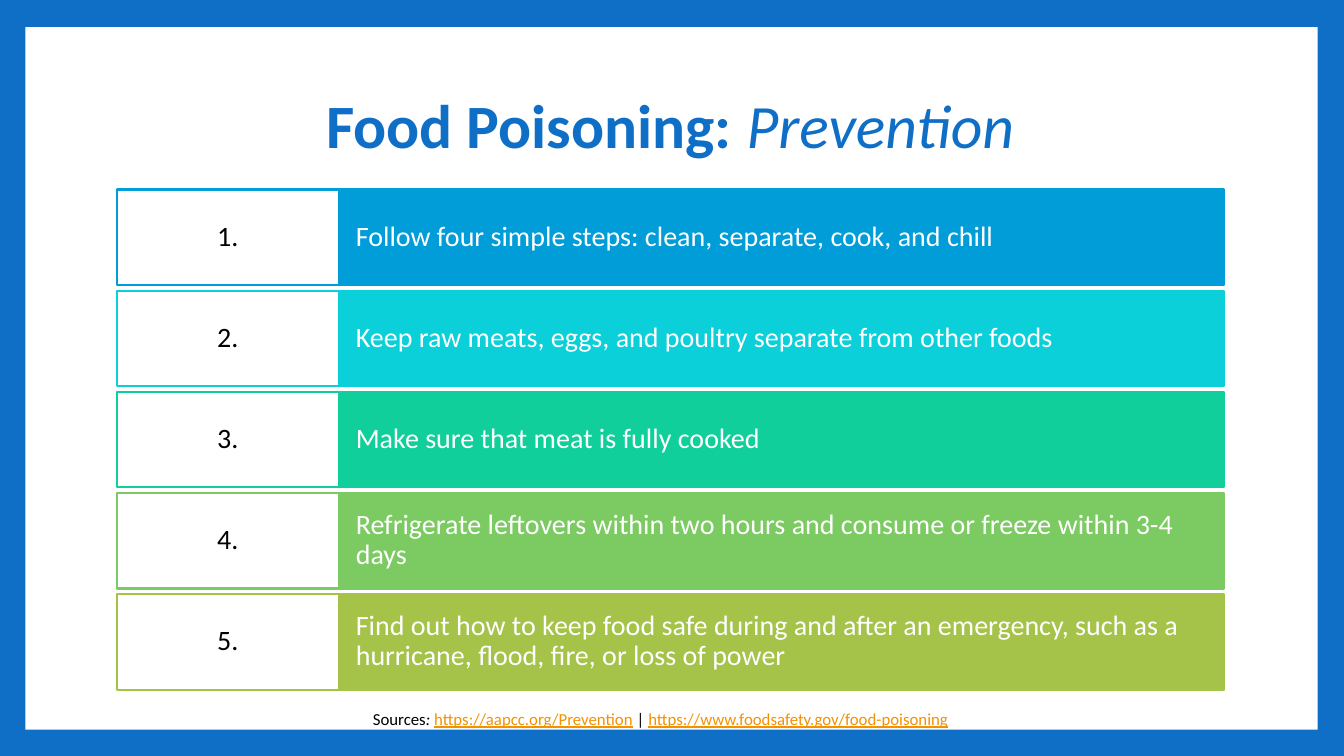
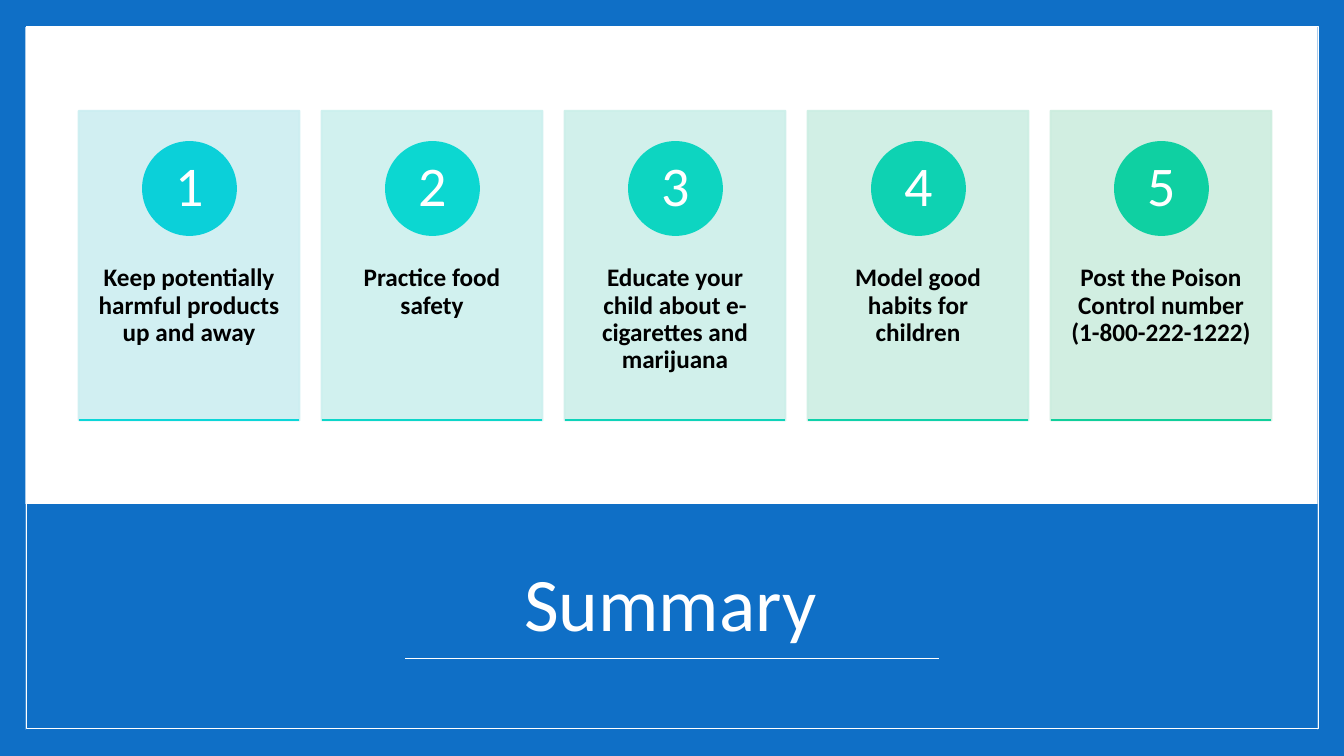
from dataclasses import dataclass
from typing import NamedTuple, Optional

from lxml.etree import SubElement
from pptx import Presentation
from pptx.dml.color import RGBColor
from pptx.enum.shapes import MSO_CONNECTOR as Link, MSO_SHAPE as Kind
from pptx.enum.text import MSO_ANCHOR as Anchor, MSO_AUTO_SIZE as Fit, PP_ALIGN as Align
from pptx.oxml.ns import qn
from pptx.shapes.autoshape import Shape
from pptx.slide import Slide
from pptx.text.text import TextFrame
from pptx.util import Inches, Pt

WIDE, HIGH = Inches(13.33), Inches(7.5)


@dataclass(frozen=True)
class Theme:
    font: str = "Calibri"
    blue: str = "0F6FC6"
    white: str = "FFFFFF"
    black: str = "000000"
    link: str = "F49100"
    head: float = 44
    big: float = 54
    digit: float = 40
    body: float = 20
    card: float = 18
    note: float = 12
    edge: float = 1.5
    thin: float = 0.79
    lead: float = 0.9
    alpha: int = 90


class Box(NamedTuple):
    """Percent shares of the slide's width and height."""
    x: float
    y: float
    w: float
    h: float


class Run(NamedTuple):
    text: str
    size: float
    color: str
    bold: bool = False
    italic: bool = False
    under: bool = False


class Step(NamedTuple):
    text: str
    color: str


class Card(NamedTuple):
    text: str
    tint: str
    disc: str
    rule: str


class Pad(NamedTuple):
    """Text insets in inches."""
    side: float
    top: float
    base: float


T = Theme()
PANEL = Box(1.88, 3.6, 96.15, 92.93)
FRAME = PANEL._replace(x=1.95, y=3.47)
BAND = PANEL._replace(y=66.67, h=29.87)
HEAD = Box(9.38, 8.93, 81, 16.13)
CLOSE = HEAD._replace(y=70.4, h=19.73)
NOTE = Box(27, 93.07, 45.9, 4)

LABEL = Box(8.7, 25.07, 16.5, 12.67)
BAR = LABEL._replace(x=LABEL.x + LABEL.w, w=65.85)
ROW = 13.37

TILE = Box(5.85, 14.67, 16.43, 40.93)
DISC = Box(TILE.x + 4.8, 18.8, 6.9, 12.27)
COL = 18.08

PLAIN = Pad(0.1, 0.05, 0.05)

STEPS = (
    Step("Follow four simple steps: clean, separate, cook, and chill", "009DD9"),
    Step("Keep raw meats, eggs, and poultry separate from other foods", "0BD0D9"),
    Step("Make sure that meat is fully cooked", "10CF9B"),
    Step("Refrigerate leftovers within two hours and consume or freeze within 3-4 days", "7CCA62"),
    Step("Find out how to keep food safe during and after an emergency, "
         "such as a hurricane, flood, fire, or loss of power", "A5C249"),
)

CARDS = (
    Card("Keep potentially harmful products up and away", "CCEEF1", "0BD0D9", "0CD6D8"),
    Card("Practice food safety", "CCF0EE", "0CD7D1", "0DD6C9"),
    Card("Educate your child about e-cigarettes and marijuana", "CCEFE9", "0DD5C1", "0ED3B9"),
    Card("Model good habits for children", "CCEEE3", "0ED2B2", "0FD1AA"),
    Card("Post the Poison Control number (1-800-222-1222)", "CCEDDE", "0FD0A2", "10CF9B"),
)


def rgb(code: str) -> RGBColor:
    return RGBColor.from_string(code)


def place(box: Box) -> tuple[int, int, int, int]:
    return (round(box.x * WIDE / 100), round(box.y * HIGH / 100),
            round(box.w * WIDE / 100), round(box.h * HIGH / 100))


def write(frame: TextFrame, runs: list[Run], align: Align = Align.CENTER,
          anchor: Anchor = Anchor.MIDDLE, pad: Pad = PLAIN, lead: float = T.lead) -> None:
    frame.word_wrap = True
    frame.auto_size = Fit.NONE
    frame.vertical_anchor = anchor
    frame.margin_left = frame.margin_right = Inches(pad.side)
    frame.margin_top, frame.margin_bottom = Inches(pad.top), Inches(pad.base)
    para = frame.paragraphs[0]
    para.alignment, para.line_spacing = align, lead
    for item in runs:
        run = para.add_run()
        run.text = item.text
        font = run.font
        font.name, font.size = T.font, Pt(item.size)
        font.color.rgb = rgb(item.color)
        font.bold, font.italic, font.underline = item.bold, item.italic, item.under


def block(slide: Slide, box: Box, fill: Optional[str] = None, line: Optional[str] = None,
          kind: Kind = Kind.RECTANGLE, width: float = T.edge) -> Shape:
    shape = slide.shapes.add_shape(kind, *place(box))
    shape.shadow.inherit = False
    if fill:
        shape.fill.solid()
        shape.fill.fore_color.rgb = rgb(fill)
    else:
        shape.fill.background()
    if line:
        shape.line.color.rgb = rgb(line)
        shape.line.width = Pt(width)
    else:
        shape.line.fill.background()
    return shape


def fade(shape: Shape, share: int) -> None:
    for color in list(shape.element.spPr.iter(qn("a:srgbClr"))):
        SubElement(color, qn("a:alpha")).set("val", str(share * 1000))


def rule(slide: Slide, x: float, y: float, w: float, color: str, width: float = T.edge) -> None:
    left, top, span, _ = place(Box(x, y, w, 0))
    line = slide.shapes.add_connector(Link.STRAIGHT, left, top, left + span, top)
    line.line.color.rgb = rgb(color)
    line.line.width = Pt(width)
    SubElement(line.element.spPr, qn("a:effectLst"))


def start(deck: Presentation, box: Box, runs: list[Run], band: Optional[Box] = None) -> Slide:
    slide = deck.slides.add_slide(deck.slide_layouts[5])
    title = slide.shapes.title
    title.left, title.top, title.width, title.height = place(box)
    write(title.text_frame, runs)
    backs = [block(slide, PANEL, T.white)]
    if band:
        backs.append(block(slide, band, T.blue))
    for back in backs:
        title.element.addprevious(back.element)
    return slide


def steps(deck: Presentation) -> None:
    slide = start(deck, HEAD, [Run("Food Poisoning: ", T.head, T.blue, bold=True),
                               Run("Prevention", T.head, T.blue, italic=True)])
    for i, step in enumerate(STEPS):
        bar = block(slide, BAR._replace(y=BAR.y + i * ROW), step.color, step.color)
        write(bar.text_frame, [Run(step.text, T.body, T.white)], Align.LEFT,
              pad=Pad(0.17, 0.24, 0.24))
        label = block(slide, LABEL._replace(y=LABEL.y + i * ROW), T.white, step.color)
        write(label.text_frame, [Run(f"{i + 1}.", T.body, T.black)], pad=Pad(0.12, 0.09, 0.09))
    note = slide.shapes.add_textbox(*place(NOTE))
    write(note.text_frame, [
        Run("Sources", T.note, T.black),
        Run(": ", T.note, T.black, italic=True),
        Run("https://aapcc.org/Prevention", T.note, T.link, under=True),
        Run(" | ", T.note, T.black),
        Run("https://www.foodsafety.gov/food-poisoning", T.note, T.link, under=True),
    ], Align.LEFT, Anchor.TOP, lead=1.0)


def summary(deck: Presentation) -> None:
    slide = start(deck, CLOSE, [Run("Summary", T.big, T.white)], BAND)
    block(slide, FRAME, line=T.white, width=1)
    for i, card in enumerate(CARDS):
        box = TILE._replace(x=TILE.x + i * COL)
        tile = block(slide, box, card.tint, card.tint)
        fade(tile, T.alpha)
        write(tile.text_frame, [Run(card.text, T.card, T.black, bold=True)],
              anchor=Anchor.TOP, pad=Pad(0.17, 1.53, 0.36))
        disc = block(slide, DISC._replace(x=DISC.x + i * COL), card.disc, card.disc, Kind.OVAL)
        write(disc.text_frame, [Run(str(i + 1), T.digit, T.white)], pad=Pad(0.07, 0.01, 0.01))
        rule(slide, box.x, box.y + box.h, box.w, card.rule)
    rule(slide, 30.15, 87.07, 39.75, T.white, T.thin)


def main() -> None:
    deck = Presentation()
    deck.slide_width, deck.slide_height = WIDE, HIGH
    fill = deck.slide_master.background.fill
    fill.solid()
    fill.fore_color.rgb = rgb(T.blue)
    steps(deck)
    summary(deck)
    deck.save("out.pptx")


if __name__ == "__main__":
    main()
